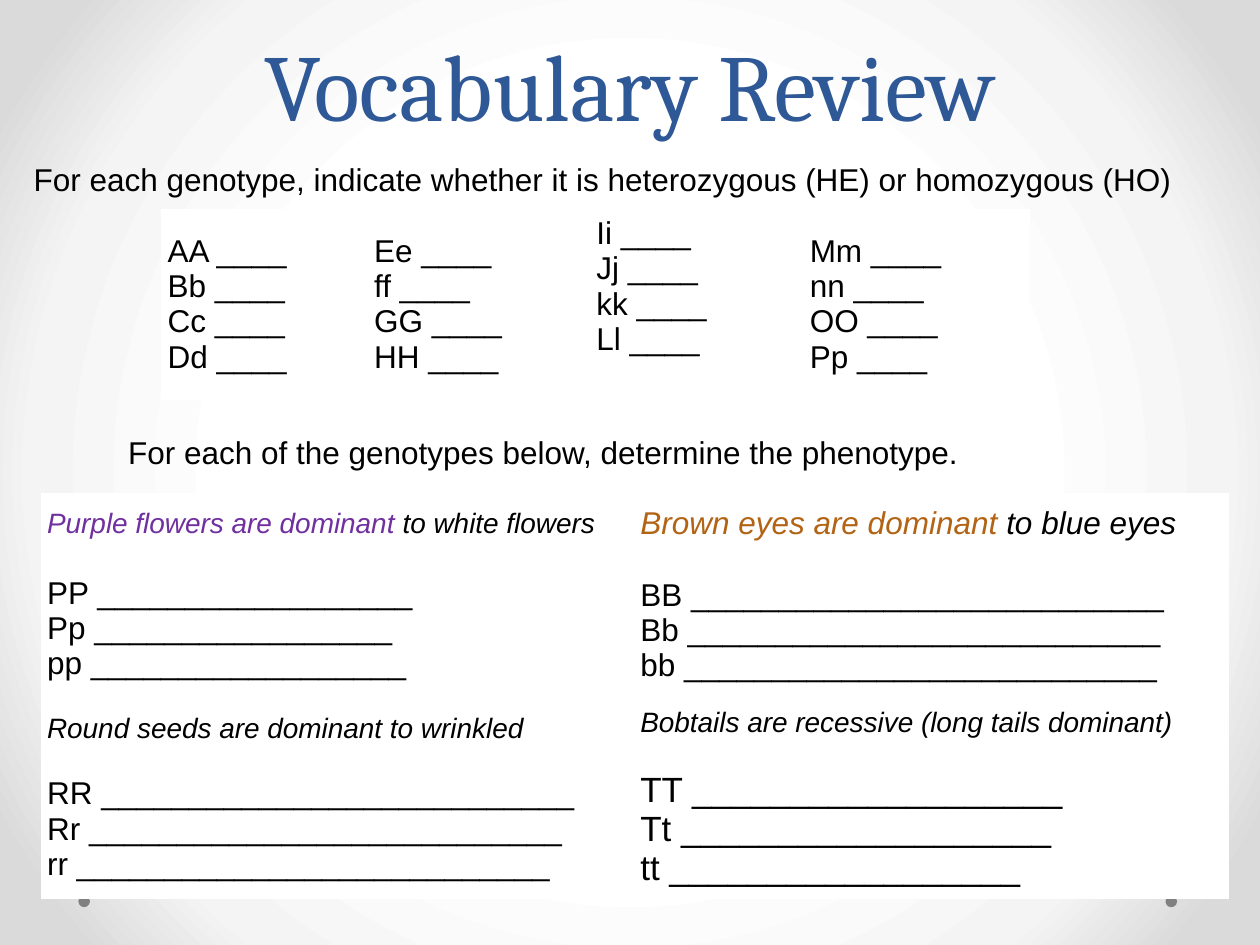
from pptx import Presentation
from pptx import util as u
from pptx.dml.color import RGBColor
from pptx.enum import shapes, text
from pptx.oxml import parse_xml

BLACK, WHITE, BLUE, GRAY = "000000", "FFFFFF", "2F5897", "808080"
PURPLE, BROWN = "7030A0", "B26314"
NAMESPACES = (
    'xmlns:a="http://schemas.openxmlformats.org/drawingml/2006/main" '
    'xmlns:p="http://schemas.openxmlformats.org/presentationml/2006/main"'
)


def color(value):
    return RGBColor.from_string(value)


class SlideBuilder:
    """Holds the text style and the slide being built."""

    font, size = "Arial", 18

    def __init__(self, slide):
        self.slide = slide

    def background(self, stops):
        stop_xml = "".join(
            f'<a:gs pos="{percent * 1000}"><a:srgbClr val="{value}"/></a:gs>'
            for percent, value in stops
        )
        self.slide.element.cSld.insert(0, parse_xml(
            f'<p:bg {NAMESPACES}><p:bgPr><a:gradFill rotWithShape="1">'
            f'<a:gsLst>{stop_xml}</a:gsLst><a:path path="circle">'
            '<a:fillToRect l="50000" t="50000" r="50000" b="50000"/></a:path>'
            '</a:gradFill><a:effectLst/></p:bgPr></p:bg>'
        ))

    def style(self, run, size=None, value=BLACK, italic=False, font=None):
        run.font.name = font or self.font
        run.font.size = u.Pt(size or self.size)
        run.font.color.rgb = color(value)
        run.font.bold = False
        run.font.italic = italic

    def title(self, words, left, top, width, height):
        shape = self.slide.shapes.title
        shape.left, shape.top = u.Pt(left), u.Pt(top)
        shape.width, shape.height = u.Pt(width), u.Pt(height)
        frame = shape.text_frame
        frame.text = words
        frame.auto_size = text.MSO_AUTO_SIZE.NONE
        frame.vertical_anchor = text.MSO_ANCHOR.BOTTOM
        paragraph = frame.paragraphs[0]
        paragraph.alignment = text.PP_ALIGN.CENTER
        paragraph.line_spacing = u.Pt(58)
        self.style(paragraph.runs[0], 54, BLUE, font="Cambria")

    def dot(self, left, top, diameter):
        shape = self.slide.shapes.add_shape(
            shapes.MSO_SHAPE.OVAL, u.Pt(left), u.Pt(top), u.Pt(diameter), u.Pt(diameter))
        shape.shadow.inherit = False
        shape.fill.solid()
        shape.fill.fore_color.rgb = color(GRAY)
        shape.line.fill.background()

    def instruction(self, words, left, top, width, height):
        shape = self.slide.shapes.add_textbox(
            u.Pt(left), u.Pt(top), u.Pt(width), u.Pt(height))
        frame = shape.text_frame
        frame.text = words
        frame.word_wrap = True
        frame.vertical_anchor = text.MSO_ANCHOR.MIDDLE
        self.style(frame.paragraphs[0].runs[0])

    def table(self, left, top, widths, heights, inset):
        table = self.slide.shapes.add_table(
            len(heights), len(widths), u.Pt(left), u.Pt(top),
            u.Pt(sum(widths)), u.Pt(sum(heights))).table
        table.first_row = table.horz_banding = False
        for column, width in zip(table.columns, widths):
            column.width = u.Pt(width)
        for row, height in zip(table.rows, heights):
            row.height = u.Pt(height)
        for cell in table.iter_cells():
            cell.fill.solid()
            cell.fill.fore_color.rgb = color(WHITE)
            cell.vertical_anchor = text.MSO_ANCHOR.MIDDLE
            cell.margin_left = cell.margin_right = u.Pt(inset)
            cell.margin_top = cell.margin_bottom = u.Pt(inset)
        return table

    def lines(self, cell, rows, size=None):
        cell.text_frame.text = "\n".join(rows)
        for paragraph in cell.text_frame.paragraphs:
            self.style(paragraph.runs[0], size)

    def question(self, cell, heading, heading_size, answers, size, gap):
        """Italic heading of (words, colour) parts above the answer lines."""
        self.lines(cell, ["", *answers][1:], size)
        frame = cell.text_frame
        frame.text = "\n".join(["".join(words for words, _ in heading), *answers])
        first, *others = frame.paragraphs
        first.text = heading[0][0]
        for words, _ in heading[1:]:
            first.add_run().text = words
        for run, (_, value) in zip(first.runs, heading):
            self.style(run, heading_size, value, italic=True)
        others[0].space_before = u.Pt(gap)
        for paragraph in others:
            self.style(paragraph.runs[0], size)


def blanks(names, counts):
    return [f"{name} {'_' * count}" for name, count in zip(names, counts)]


def main():
    presentation = Presentation()
    presentation.slide_width, presentation.slide_height = u.Pt(720), u.Pt(540)
    builder = SlideBuilder(presentation.slides.add_slide(presentation.slide_layouts[5]))

    # Backdrop and title
    builder.background([(50, "FFFFFF"), (76, "F4F4F4"), (92, "DADADA")])
    for left in (44.8, 666):
        builder.dot(left, 511.8, 6.6)
    builder.title("Vocabulary Review", 36, 0, 648, 84)

    # Heterozygous or homozygous
    genotypes = builder.table(92.2, 119.8, [118, 127, 122, 129], [108], 3.6)
    groups = ["AA Bb Cc Dd", "Ee ff GG HH", "Ii Jj kk Ll", "Mm nn OO Pp"]
    for cell, group in zip(genotypes.iter_cells(), groups):
        builder.lines(cell, blanks(group.split(), [4] * 4))
    genotypes.cell(0, 2).margin_bottom = u.Pt(24)  # this column sits higher
    builder.instruction(
        "For each genotype, indicate whether it is heterozygous (HE) or homozygous (HO)",
        12.2, 84.2, 690, 36)

    # Phenotypes
    phenotypes = builder.table(24, 282, [339, 339], [116, 113], 2.9)
    questions = [
        ([("Purple flowers are dominant ", PURPLE), ("to white flowers", BLACK)],
         16, blanks(["PP", "Pp", "pp"], [18, 17, 18]), 18, 20.7),
        ([("Brown eyes are dominant ", BROWN), ("to blue eyes", BLACK)],
         18, blanks(["BB", "Bb", "bb"], [27] * 3), 18, 20.7),
        ([("Round seeds are dominant to wrinkled", BLACK)],
         16, blanks(["RR", "Rr", "rr"], [27] * 3), 18, 18.4),
        ([("Bobtails are recessive (long tails dominant)", BLACK)],
         16, blanks(["TT", "Tt", "tt"], [19, 19, 18]), 20, 18.4),
    ]
    for cell, question in zip(phenotypes.iter_cells(), questions):
        builder.question(cell, *question)
    builder.instruction("For each of the genotypes below, determine the phenotype.",
                        66.2, 243.6, 516, 29)

    presentation.save("out.pptx")


if __name__ == "__main__":
    main()
